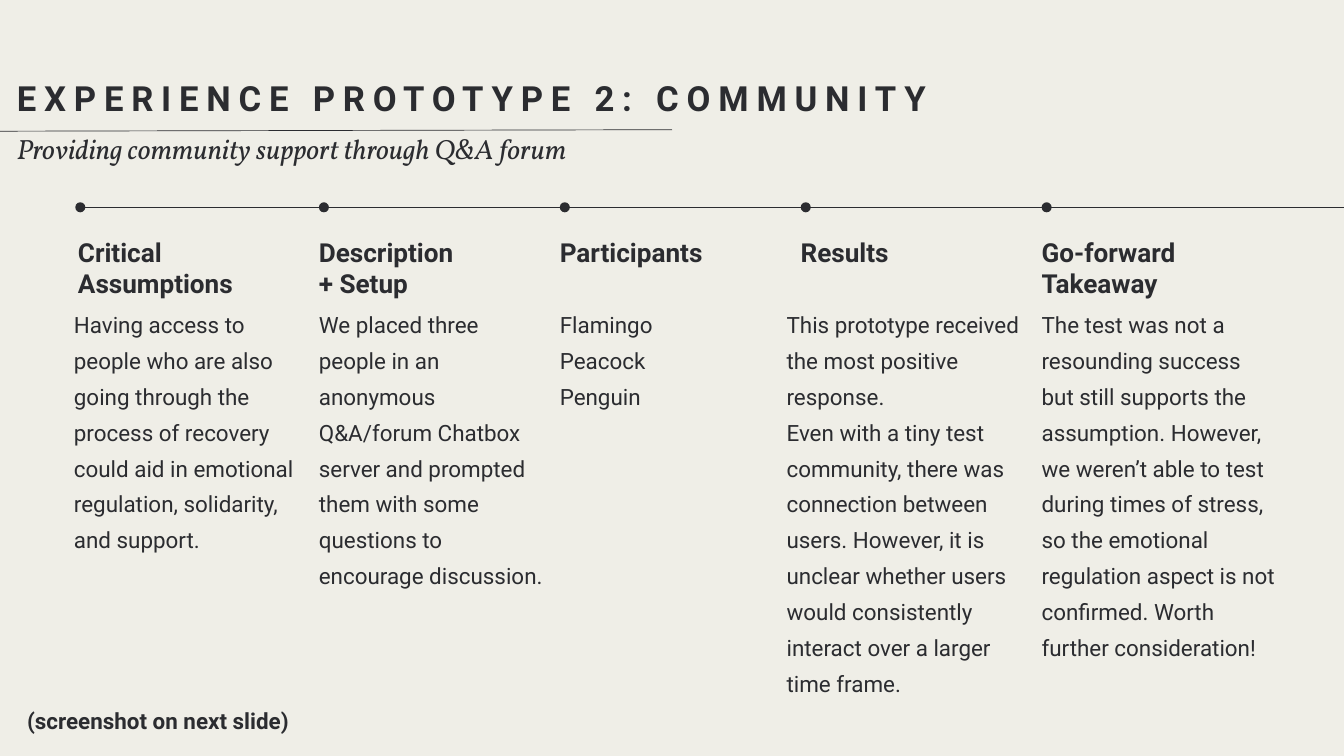
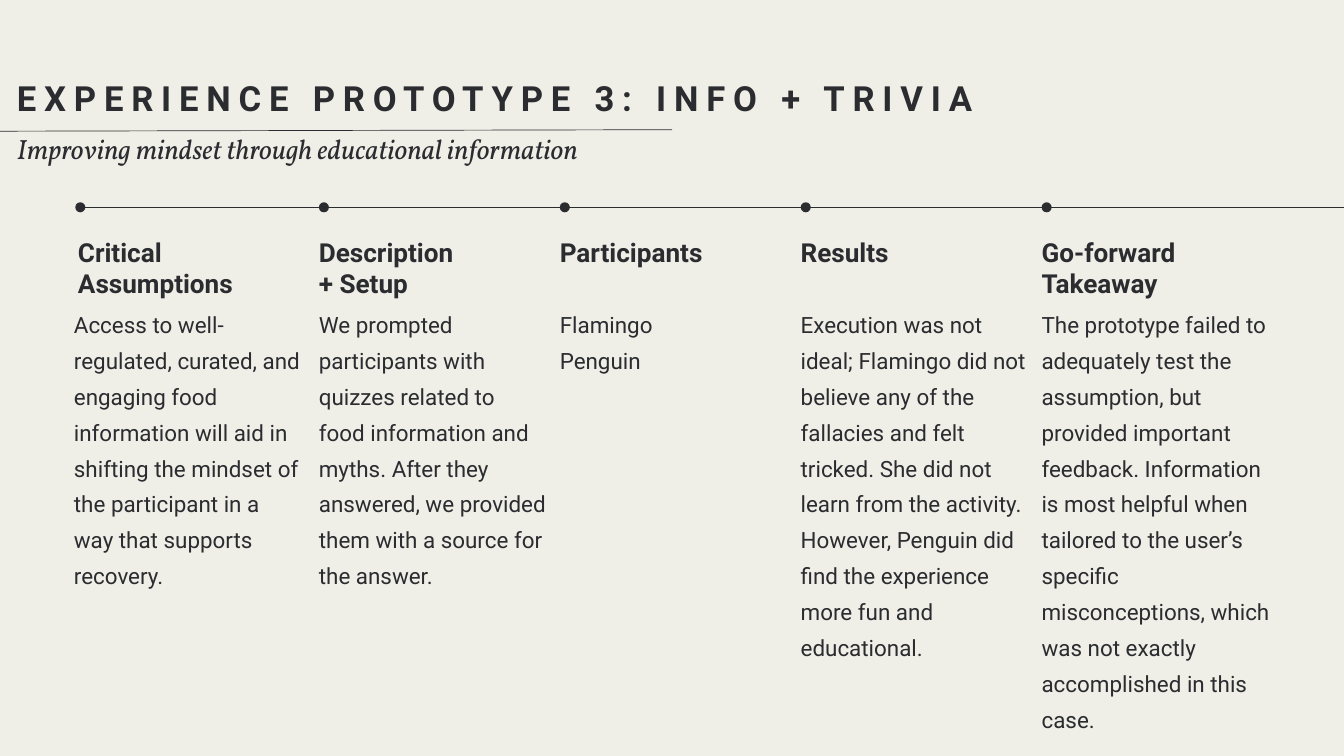
from pptx import Presentation
from pptx import util as u
from pptx.dml.color import RGBColor
from pptx.enum import shapes, text
from pptx.oxml.ns import qn
from lxml import etree

INK = RGBColor(0x2B, 0x2C, 0x30)
PAPER = RGBColor(0xEF, 0xEE, 0xE7)
SANS, SERIF = "Roboto", "Vollkorn"

WIDTH, HEIGHT = 20, 11.25
MARGIN = 0.25
FIRST_COLUMN, PITCH = 1.16, 3.585
HEADING_TOP, BODY_TOP = 3.52, 4.5
HEADING_WIDTH, BODY_WIDTH = 3.05, 3.38
HEADING_LINE, BODY_LINE = 0.465, 0.53
DOT, DOT_TOP = 0.15, 3.01
TIMELINE_Y = 3.09

# heading paragraphs, number of lines
HEADINGS = [
    (["Critical Assumptions"], 2),
    (["Description", "+ Setup"], 2),
    (["Participants"], 1),
    (["Results"], 1),
    (["Go-forward", "Takeaway"], 2),
]

# body: paragraphs, lines of room, shift from the column, width
PAGES = [
    dict(
        title="EXPERIENCE PROTOTYPE 2: COMMUNITY",
        subtitle="Providing community support through Q&A forum",
        note="(screenshot on next slide)",
        bodies=[
            (["Having access to people who are also going through the process of "
              "recovery could aid in emotional regulation, solidarity, and support."],
             8, -0.06, BODY_WIDTH),
            (["We placed three people in an anonymous Q&A/forum Chatbox server and "
              "prompted them with some questions to encourage discussion."],
             9, 0, BODY_WIDTH),
            (["Flamingo", "Peacock", "Penguin"], 3, 0, BODY_WIDTH),
            (["This prototype received the most positive response.",
              "Even with a tiny test community, there was connection between users. "
              "However, it is unclear whether users would consistently interact over "
              "a larger time frame."],
             11, -0.21, 3.58),
            (["The test was not a resounding success but still supports the "
              "assumption. However, we weren’t able to test during times of stress, "
              "so the emotional regulation aspect is not confirmed. Worth further "
              "consideration!"],
             11, 0, 3.51),
        ],
    ),
    dict(
        title="EXPERIENCE PROTOTYPE 3: INFO + TRIVIA",
        subtitle="Improving mindset through educational information",
        note=None,
        bodies=[
            (["Access to well-regulated, curated, and engaging food information will "
              "aid in shifting the mindset of the participant in a way that supports "
              "recovery."],
             8, -0.06, BODY_WIDTH),
            (["We prompted participants with quizzes related to food information and "
              "myths. After they answered, we provided them with a source for the "
              "answer."],
             9, 0, BODY_WIDTH),
            (["Flamingo", "Penguin"], 2, 0, BODY_WIDTH),
            (["Execution was not ideal; Flamingo did not believe any of the fallacies "
              "and felt tricked. She did not learn from the activity. However, "
              "Penguin did find the experience more fun and educational."],
             10, 0, BODY_WIDTH),
            (["The prototype failed to adequately test the assumption, but provided "
              "important feedback. Information is most helpful when tailored to the "
              "user’s specific misconceptions, which was not exactly accomplished in "
              "this case."],
             12, 0, 3.6),
        ],
    ),
]


def add_text(page, paragraphs, left, top, width, height, *, size, leading,
             font=SANS, bold=False, italic=False, spacing=0,
             align=text.PP_ALIGN.LEFT):
    """Add a text box without insets; leading and spacing are in points."""
    box = page.shapes.add_textbox(*map(u.Inches, (left, top, width, height)))
    frame = box.text_frame
    frame.word_wrap = True
    frame.auto_size = text.MSO_AUTO_SIZE.SHAPE_TO_FIT_TEXT
    frame.margin_left = frame.margin_right = 0
    frame.margin_top = frame.margin_bottom = 0
    for number, words in enumerate(paragraphs):
        para = frame.add_paragraph() if number else frame.paragraphs[0]
        para.alignment = align
        para.line_spacing = u.Pt(leading)
        span = para.add_run()
        span.text = words
        span.font.name = font
        span.font.size = u.Pt(size)
        span.font.bold = bold
        span.font.italic = italic
        span.font.color.rgb = INK
        if spacing:
            span.font._element.set("spc", str(round(spacing * 100)))


def add_line(page, *ends):
    line = page.shapes.add_connector(
        shapes.MSO_CONNECTOR.STRAIGHT, *map(u.Inches, ends))
    line.line.color.rgb = INK
    line.line.width = u.Pt(0.75)
    etree.SubElement(line._element.spPr, qn("a:effectLst"))


def add_dot(page, left):
    dot = page.shapes.add_shape(
        shapes.MSO_SHAPE.OVAL, *map(u.Inches, (left, DOT_TOP, DOT, DOT)))
    dot.shadow.inherit = False
    dot.fill.solid()
    dot.fill.fore_color.rgb = INK
    dot.line.fill.background()


def add_header(page, title, subtitle):
    add_line(page, -7.75, 1.97, WIDTH / 2, 1.93)
    add_text(page, [title], MARGIN, 1.04, 17.75, 0.71,
             size=37.1, leading=52, bold=True, spacing=8.4)
    add_text(page, [subtitle], MARGIN, 2.08, WIDTH / 2, 0.4,
             size=29.8, leading=27.1, font=SERIF, italic=True, spacing=0.1)


def add_columns(page, bodies):
    """Draw the timeline with a dot, a heading and a body for each column."""
    add_line(page, 1.23, TIMELINE_Y, 20.26, TIMELINE_Y)
    for column, (heading, body) in enumerate(zip(HEADINGS, bodies)):
        left = FIRST_COLUMN + column * PITCH
        add_dot(page, left if column else left - 0.04)
        words, lines = heading
        add_text(page, words, left, HEADING_TOP, HEADING_WIDTH,
                 lines * HEADING_LINE, size=28, leading=33.6, bold=True)
        words, lines, shift, width = body
        add_text(page, words, left + shift, BODY_TOP, width,
                 lines * BODY_LINE, size=24, leading=38.4)


def main():
    deck = Presentation()
    deck.slide_width, deck.slide_height = u.Inches(WIDTH), u.Inches(HEIGHT)
    for content in PAGES:
        page = deck.slides.add_slide(deck.slide_layouts[6])
        page.background.fill.solid()
        page.background.fill.fore_color.rgb = PAPER
        add_header(page, content["title"], content["subtitle"])
        add_columns(page, content["bodies"])
        if content["note"]:
            add_text(page, [content["note"]], 0.1, 10.46, 4.5, 0.45,
                     size=24, leading=33.6, bold=True,
                     align=text.PP_ALIGN.CENTER)
    deck.save("out.pptx")


if __name__ == "__main__":
    main()
